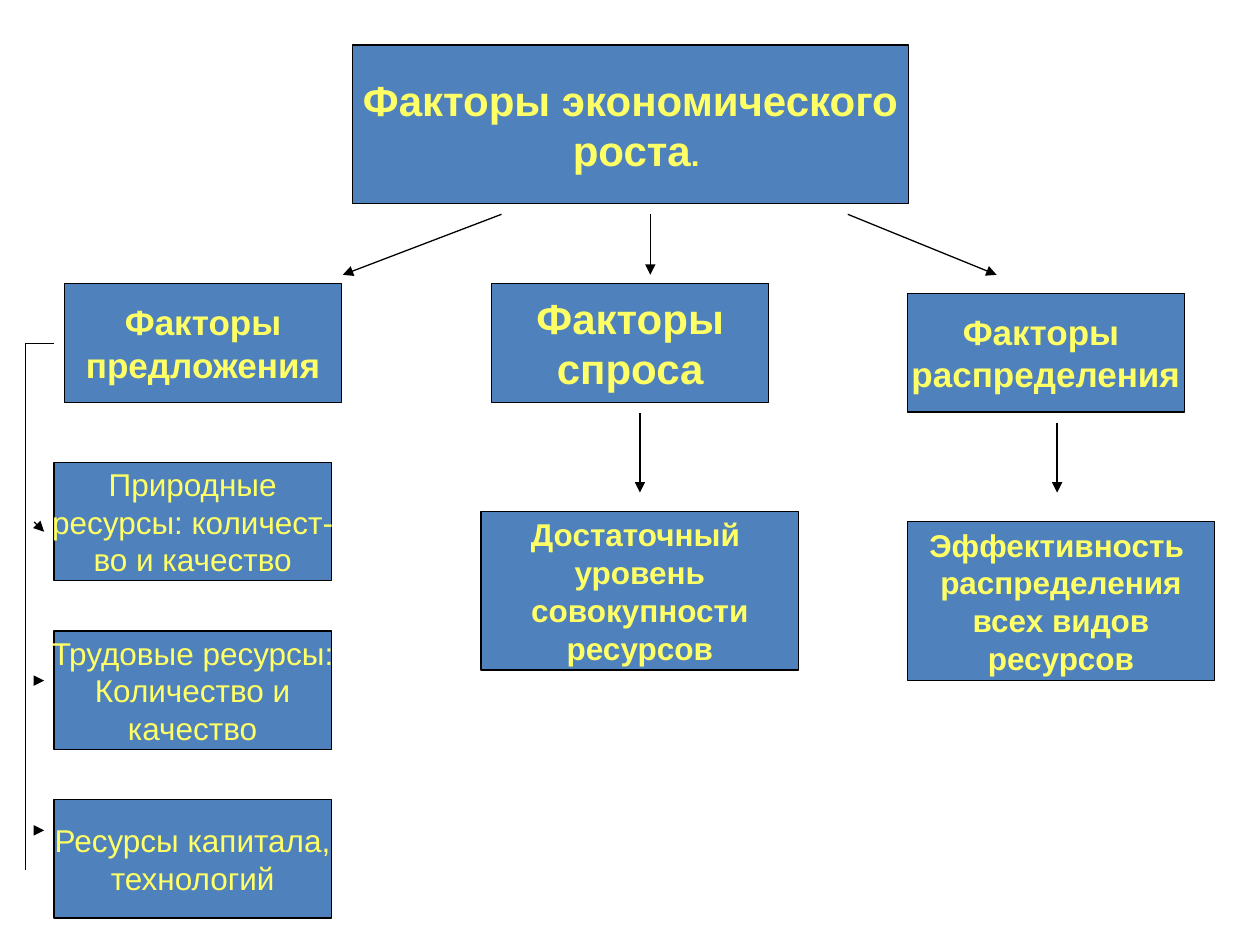
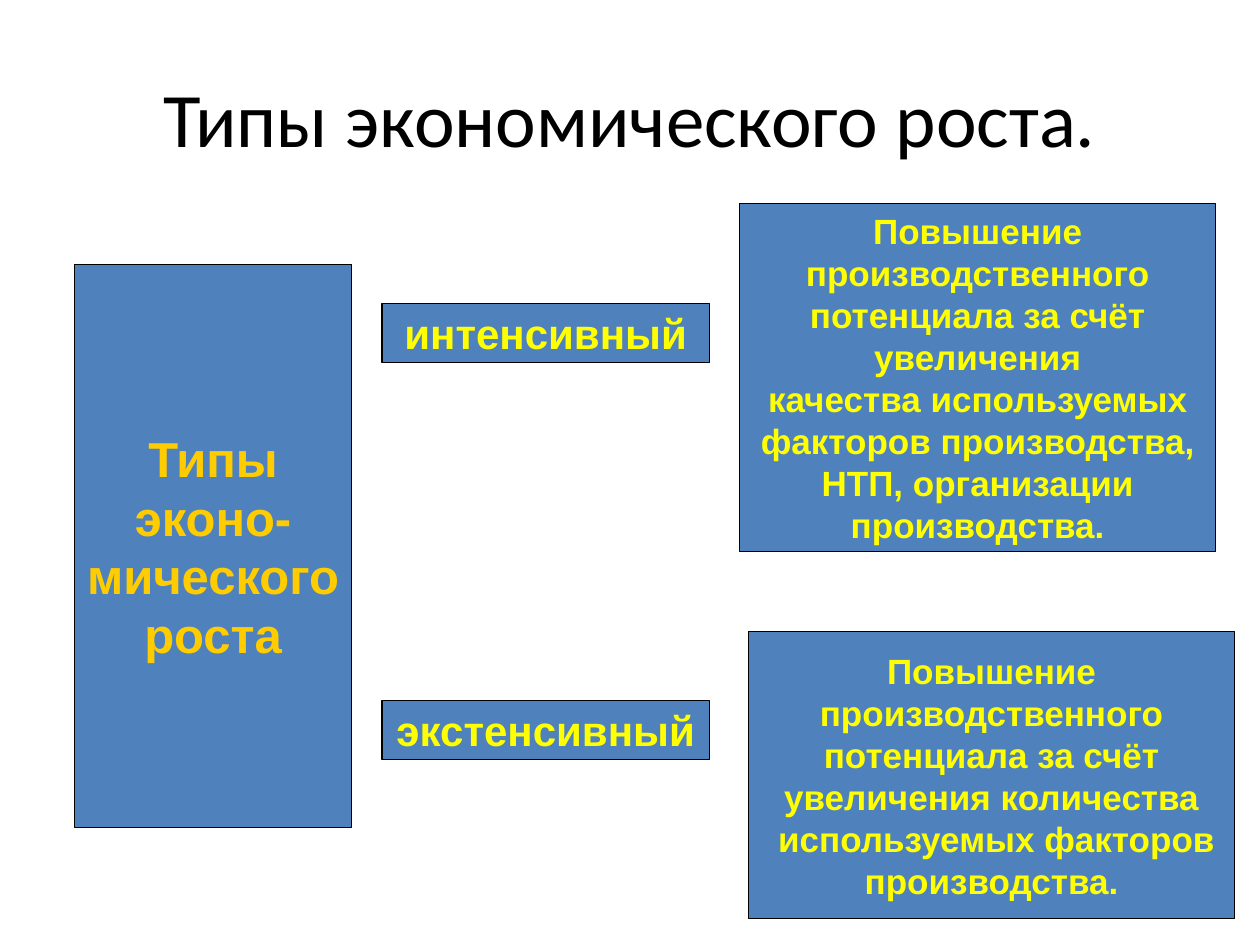
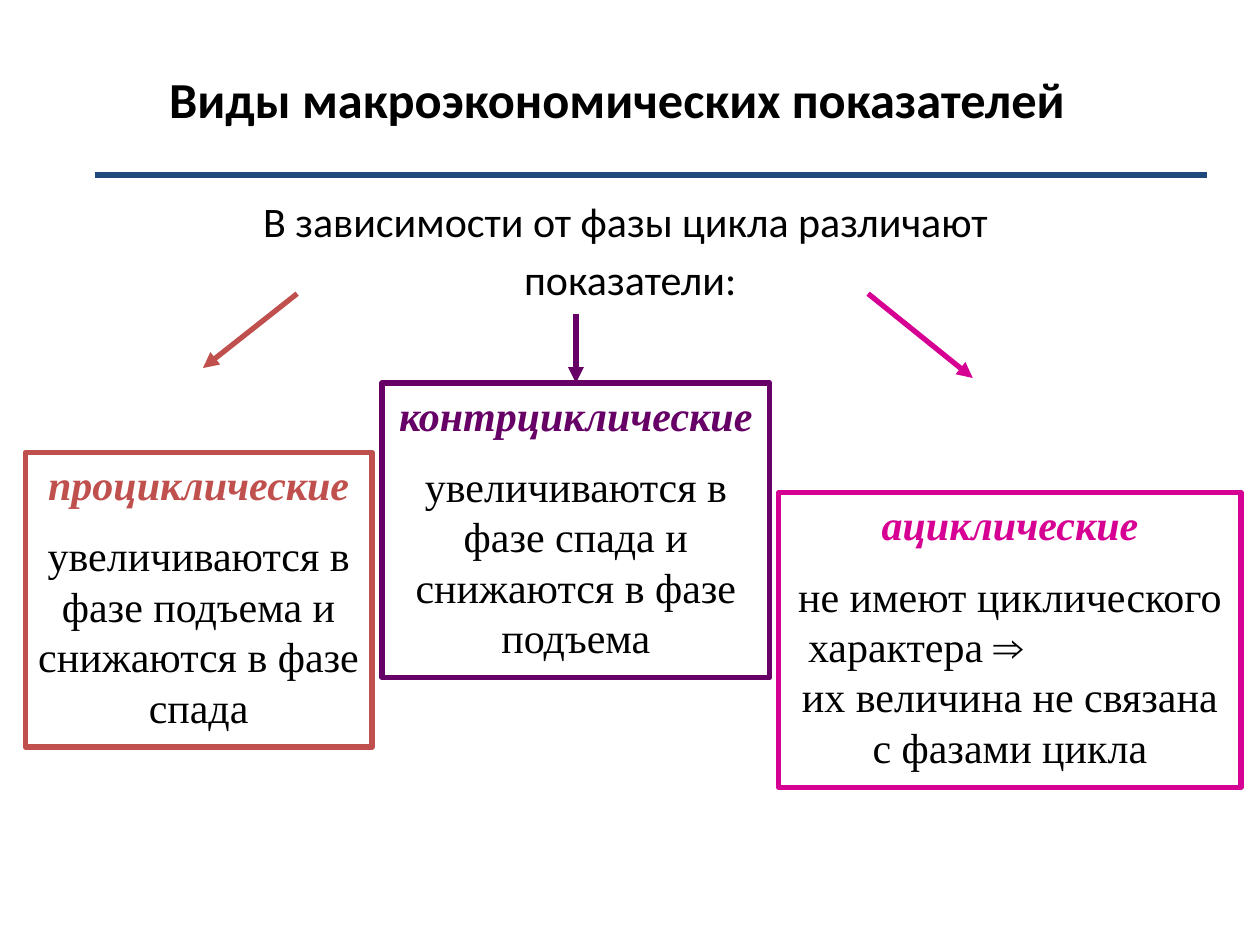
"""Build three slides on economic growth factors, growth types and macroeconomic indicators."""
import dataclasses

import pptx
import pptx.dml.color
import pptx.enum.shapes
import pptx.enum.text
import pptx.oxml
import pptx.oxml.ns
import pptx.util

Cm, Pt = pptx.util.Cm, pptx.util.Pt
RGB = pptx.dml.color.RGBColor.from_string
ALIGN = pptx.enum.text.PP_ALIGN
ANCHOR = pptx.enum.text.MSO_ANCHOR


@dataclasses.dataclass(frozen=True)
class Theme:
    box: str = "4F81BD"
    black: str = "000000"
    pale: str = "FFFF66"
    yellow: str = "FFFF00"
    gold: str = "FFCC00"
    navy: str = "1F497D"
    red: str = "C0504D"
    purple: str = "660066"
    pink: str = "D60093"
    sans: str = "Arial"
    heading: str = "Calibri"
    serif: str = "Times New Roman"
    small: float = 18
    medium: float = 20
    large: float = 24
    huge: float = 28
    subtitle: float = 28.8
    title_end: float = 39.6
    title: float = 44
    thin: float = 0.75
    thick: float = 3


T = Theme()

ROOT = ((7.11, 0.91, 11.2, 3.2), "Факторы экономического\n роста")
FACTORS = [
    ((1.3, 5.72, 5.59, 2.39), "Факторы\nпредложения", T.medium),
    ((9.91, 5.72, 5.59, 2.39), "Факторы\nспроса", T.large),
    ((18.29, 5.92, 5.59, 2.39), "Факторы \nраспределения", T.medium),
]
RESULTS = [
    ((9.7, 10.31, 6.4, 3.2), "Достаточный \nуровень\nсовокупности\nресурсов"),
    ((18.29, 10.52, 6.2, 3.2), "Эффективность \nраспределения\nвсех видов\nресурсов"),
]
RESOURCES = [
    "Природные\nресурсы: количест-\nво и качество",
    "Трудовые ресурсы:\nКоличество и\nкачество",
    "Ресурсы капитала,\nтехнологий",
]
RESOURCE_TOP, RESOURCE_STEP = 9.32, 3.4
FACTOR_ARROWS = [
    (10.11, 4.32, 6.91, 5.54),
    (13.11, 4.32, 13.11, 5.54),
    (17.09, 4.32, 20.09, 5.54),
    (12.9, 8.33, 12.9, 9.93),
    (21.31, 8.53, 21.31, 9.93),
    (0.69, 10.52, 0.89, 10.72),
    (0.69, 13.72, 0.89, 13.72),
    (0.69, 16.74, 0.89, 16.74),
]
BRACKET = [(1.09, 6.93, 0.51, 6.93), (0.51, 6.93, 0.51, 17.53)]

TYPES = [
    ((1.5, 5.33, 5.59, 11.35), "Типы\nэконо-\nмического\nроста", T.huge, T.gold),
    ((7.7, 6.12, 6.6, 1.19), "интенсивный", T.large, T.yellow),
    ((7.7, 14.12, 6.6, 1.19), "экстенсивный", T.large, T.yellow),
    ((14.91, 4.11, 9.6, 7.01),
     "Повышение\nпроизводственного\nпотенциала за счёт\nувеличения\nкачества используемых\n"
     "факторов производства,\nНТП, организации\nпроизводства.", T.medium, T.yellow),
    ((15.09, 12.73, 9.8, 5.79),
     "Повышение\nпроизводственного\nпотенциала за счёт\nувеличения количества\n"
     " используемых факторов\nпроизводства.", T.medium, T.yellow),
]

INDICATORS = [
    ((0.51, 9.12, 6.99, 5.94), T.red, "проциклические",
     [("увеличиваются в фазе подъема и снижаются в фазе спада", {"before": 12})]),
    ((7.7, 7.72, 7.82, 5.94), T.purple, "контрциклические",
     [("увеличиваются в фазе спада и снижаются в фазе подъема", {"before": 12})]),
    ((15.7, 9.93, 9.32, 5.94), T.pink, "ациклические",
     [("не имеют циклического", {"before": 12}),
      ("характера ⇒", {"align": ALIGN.LEFT, "indent": 0.34}),
      ("их величина не связана с фазами цикла", {})]),
]
SIDE_ARROWS = [
    ((5.99, 5.92, 4.09, 7.42), T.red),
    ((17.5, 5.92, 19.61, 7.62), T.pink),
]
MIDDLE_ARROW_TOP = 6.32


def add_text(tf, text, *, size, color=T.black, font=T.sans, bold=False, italic=False,
             align=ALIGN.CENTER, before=0, indent=0, inline=False):
    for i, line in enumerate(text.split("\n")):
        p = tf.paragraphs[-1]
        if p.runs and not (inline and i == 0):
            p = tf.add_paragraph()
        if not inline:
            p.alignment = align
            p.space_before = Pt(before)
        if indent:
            p._p.get_or_add_pPr().set("marL", str(Cm(indent)))
        r = p.add_run()
        r.text = line
        r.font.name, r.font.size = font, Pt(size)
        r.font.bold, r.font.italic = bold, italic
        r.font.color.rgb = RGB(color)


def add_box(s, at, *, fill=None, line=T.black, width=T.thin, wrap=False, anchor=ANCHOR.MIDDLE):
    sp = s.shapes.add_shape(pptx.enum.shapes.MSO_SHAPE.RECTANGLE, *map(Cm, at))
    sp.shadow.inherit = False
    if fill:
        sp.fill.solid()
        sp.fill.fore_color.rgb = RGB(fill)
    else:
        sp.fill.background()
    sp.line.color.rgb = RGB(line)
    sp.line.width = Pt(width)
    sp.text_frame.word_wrap = wrap
    sp.text_frame.vertical_anchor = anchor
    return sp


def add_label(s, at, text, **fmt):
    add = add_box(s, at, fill=T.box)
    add_text(add.text_frame, text, **fmt)
    return add


def add_frame(s, at, anchor=ANCHOR.TOP):
    tf = s.shapes.add_textbox(*map(Cm, at)).text_frame
    tf.word_wrap = True
    tf.vertical_anchor = anchor
    return tf


def add_line(s, ends, *, color=T.black, width=T.thin, arrow=True):
    c = s.shapes.add_connector(pptx.enum.shapes.MSO_CONNECTOR.STRAIGHT, *map(Cm, ends))
    c.line.color.rgb = RGB(color)
    c.line.width = Pt(width)
    if arrow:
        tail = pptx.oxml.ns.qn("a:tailEnd")
        c.line._get_or_add_ln().append(c._element.makeelement(tail, {"type": "triangle"}))
    effects = pptx.oxml.ns.qn("a:effectLst")
    c._element.spPr.append(c._element.makeelement(effects, {}))
    return c


def build_factors(s):
    at, text = ROOT
    root = add_label(s, at, text, size=T.large, color=T.pale, bold=True)
    add_text(root.text_frame, ".", size=T.small, color=T.pale, bold=True, inline=True)
    for at, text, size in FACTORS:
        add_label(s, at, text, size=size, color=T.pale, bold=True)
    for i, text in enumerate(RESOURCES):
        at = (1.09, RESOURCE_TOP + i * RESOURCE_STEP, 5.59, 2.39)
        add_label(s, at, text, size=T.small, color=T.pale)
    for at, text in RESULTS:
        add_label(s, at, text, size=T.small, color=T.pale, bold=True)
    for ends in FACTOR_ARROWS:
        add_line(s, ends)
    for ends in BRACKET:
        add_line(s, ends, arrow=False)


def build_types(s):
    tf = add_frame(s, (1.27, 0.76, 22.86, 3.18), ANCHOR.MIDDLE)
    add_text(tf, "Типы экономического роста.", size=T.title, font=T.heading)
    for at, text, size, color in TYPES:
        add_label(s, at, text, size=size, color=color, bold=True)


def build_indicators(s):
    tf = add_frame(s, (1.91, 0.91, 21.39, 1.83), ANCHOR.MIDDLE)
    add_text(tf, "Виды макроэкономических показателей", size=T.subtitle, font=T.heading, bold=True)
    add_text(tf, " ", size=T.title_end, font=T.heading, inline=True)
    tf = add_frame(s, (1.91, 3.81, 21.59, 11.43))
    add_text(tf, "В зависимости от фазы цикла различают \nпоказатели:",
             size=T.large, font=T.heading, before=4.8)
    add_line(s, (1.91, 3.53, 24.33, 3.53), color=T.navy, width=T.thick, arrow=False)
    boxes = []
    for at, color, name, body in INDICATORS:
        sp = add_box(s, at, line=color, width=T.thick, wrap=True, anchor=ANCHOR.TOP)
        add_text(sp.text_frame, name, size=T.large, color=color, font=T.serif,
                 bold=True, italic=True)
        for text, fmt in body:
            add_text(sp.text_frame, text, size=T.large, font=T.serif, **fmt)
        boxes.append(sp)
    for ends, color in SIDE_ARROWS:
        add_line(s, ends, color=color, width=T.thick)
    left, top, width, _ = INDICATORS[1][0]
    x = left + width / 2
    arrow = add_line(s, (x, MIDDLE_ARROW_TOP, x, top), color=T.purple, width=T.thick)
    arrow.end_connect(boxes[1], 0)


def main():
    prs = pptx.Presentation()
    prs.slide_width, prs.slide_height = Cm(25.4), Cm(19.05)
    for build in (build_factors, build_types, build_indicators):
        build(prs.slides.add_slide(prs.slide_layouts[6]))
    prs.save("out.pptx")


if __name__ == "__main__":
    main()
